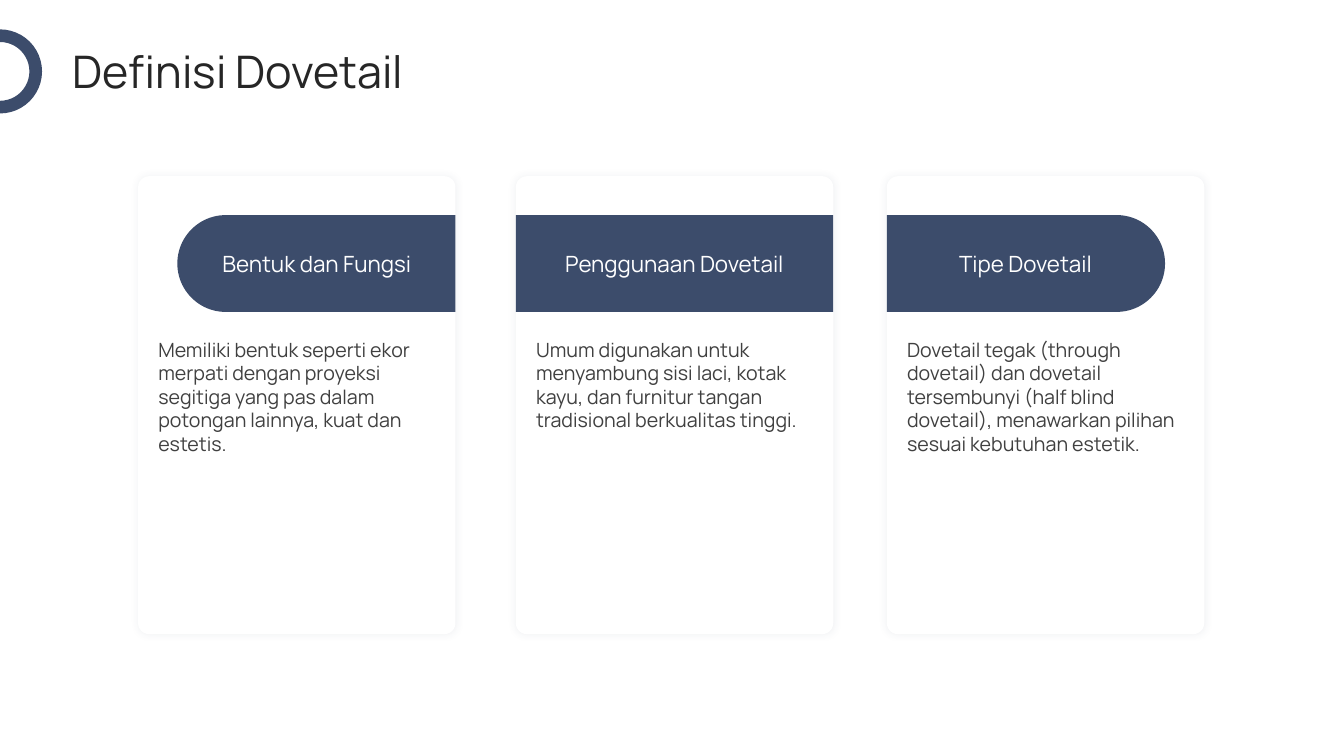
from dataclasses import dataclass

from lxml import etree
from pptx import Presentation
from pptx.dml.color import RGBColor
from pptx.enum.shapes import MSO_SHAPE
from pptx.enum.text import MSO_ANCHOR, PP_ALIGN
from pptx.oxml.ns import qn
from pptx.util import Cm, Pt

OVAL = MSO_SHAPE.OVAL
RECTANGLE = MSO_SHAPE.RECTANGLE
ROUNDED = MSO_SHAPE.ROUNDED_RECTANGLE
ROUND_TOP = MSO_SHAPE.ROUND_2_SAME_RECTANGLE
TOP, MIDDLE = MSO_ANCHOR.TOP, MSO_ANCHOR.MIDDLE
LEFT, CENTER = PP_ALIGN.LEFT, PP_ALIGN.CENTER


@dataclass(frozen=True)
class Theme:
    """Colours, font and type sizes of the slide."""
    navy: str = "3C4C6B"
    white: str = "FFFFFF"
    heading: str = "262626"
    body: str = "404040"
    font: str = "Manrope"
    title_size: int = 32
    label_size: int = 16
    body_size: int = 14


@dataclass(frozen=True)
class Card:
    """Content of one card, with its band's rotation and its label's place."""
    left: float
    label: str
    label_left: float
    label_width: float
    rotation: int
    text: str


THEME = Theme()
CARD_WIDTH, CARD_TOP, CARD_HEIGHT = 8, 4.44, 11.54
BAND_TOP, BAND_HEIGHT, BAND_LENGTH = 5.42, 2.44, 7.01
BODY_INDENT = 0.51
CARDS = (
    Card(3.48, "Bentuk dan Fungsi", 4.85, 6.27, 270,
         "Memiliki bentuk seperti ekor merpati dengan proyeksi segitiga yang "
         "pas dalam potongan lainnya, kuat dan estetis."),
    Card(13, "Penggunaan Dovetail", 13.44, 7.11, 0,
         "Umum digunakan untuk menyambung sisi laci, kotak kayu, dan furnitur "
         "tangan tradisional berkualitas tinggi."),
    Card(22.35, "Tipe Dovetail", 22.76, 6.17, 90,
         "Dovetail tegak (through dovetail) dan dovetail tersembunyi (half "
         "blind dovetail), menawarkan pilihan sesuai kebutuhan estetik."),
)


def add_filled(slide, kind, left, top, width, height, color):
    """Add a preset shape with a plain fill and no outline."""
    shape = slide.shapes.add_shape(kind, Cm(left), Cm(top), Cm(width), Cm(height))
    shape.shadow.inherit = False
    shape.fill.solid()
    shape.fill.fore_color.rgb = RGBColor.from_string(color)
    shape.line.fill.background()
    return shape


def add_glow(shape):
    """Give a shape a faint, centred soft shadow."""
    effects = shape.element.spPr.find(qn("a:effectLst"))
    shadow = etree.SubElement(effects, qn("a:outerShdw"), blurRad=str(Pt(5.6)),
                              dist="0", dir="0", algn="ctr", rotWithShape="0")
    color = etree.SubElement(shadow, qn("a:srgbClr"), val=THEME.navy)
    etree.SubElement(color, qn("a:alpha"), val="8000")


def add_text(slide, text, left, top, width, height, size, color,
             anchor=MIDDLE, alignment=LEFT):
    """Add a wrapping text box without insets."""
    box = slide.shapes.add_textbox(Cm(left), Cm(top), Cm(width), Cm(height))
    frame = box.text_frame
    frame.word_wrap = True
    frame.vertical_anchor = anchor
    frame.margin_left = frame.margin_right = 0
    frame.margin_top = frame.margin_bottom = 0
    frame.text = text
    paragraph = frame.paragraphs[0]
    paragraph.alignment = alignment
    font = paragraph.runs[0].font
    font.name = THEME.font
    font.size = Pt(size)
    font.color.rgb = RGBColor.from_string(color)


def add_band(slide, card):
    """Add the navy band, rounded at its outer end when it is rotated."""
    if not card.rotation:
        add_filled(slide, RECTANGLE, card.left, BAND_TOP, CARD_WIDTH,
                   BAND_HEIGHT, THEME.navy)
        return
    start = card.left if card.rotation == 90 else card.left + CARD_WIDTH - BAND_LENGTH
    shift = (BAND_LENGTH - BAND_HEIGHT) / 2
    band = add_filled(slide, ROUND_TOP, start + shift, BAND_TOP - shift,
                      BAND_HEIGHT, BAND_LENGTH, THEME.navy)
    band.adjustments[0] = 0.5
    band.rotation = card.rotation


def add_card(slide, card):
    """Add a card with its band, label and body text."""
    panel = add_filled(slide, ROUNDED, card.left, CARD_TOP, CARD_WIDTH,
                       CARD_HEIGHT, THEME.white)
    panel.adjustments[0] = 0.035
    add_glow(panel)
    add_band(slide, card)
    add_text(slide, card.label, card.label_left, 5.74, card.label_width, 1.78,
             THEME.label_size, THEME.white, alignment=CENTER)
    add_text(slide, card.text, card.left + BODY_INDENT, 8.51, BAND_LENGTH, 6.13,
             THEME.body_size, THEME.body, anchor=TOP)


def add_header(slide):
    """Add the ring at the slide's edge and the title."""
    ring = slide.shapes.add_shape(OVAL, Cm(-0.9), Cm(0.9), Cm(1.8), Cm(1.8))
    ring.shadow.inherit = False
    ring.fill.background()
    ring.line.color.rgb = RGBColor.from_string(THEME.navy)
    ring.line.width = Pt(9)
    add_text(slide, "Definisi Dovetail", 1.83, 1.19, 30.18, 1.19,
             THEME.title_size, THEME.heading)


def main():
    """Build the slide and save it."""
    presentation = Presentation()
    presentation.slide_width, presentation.slide_height = Cm(33.87), Cm(19.05)
    slide = presentation.slides.add_slide(presentation.slide_layouts[6])
    for card in CARDS:
        add_card(slide, card)
    add_header(slide)
    presentation.save("out.pptx")


if __name__ == "__main__":
    main()
